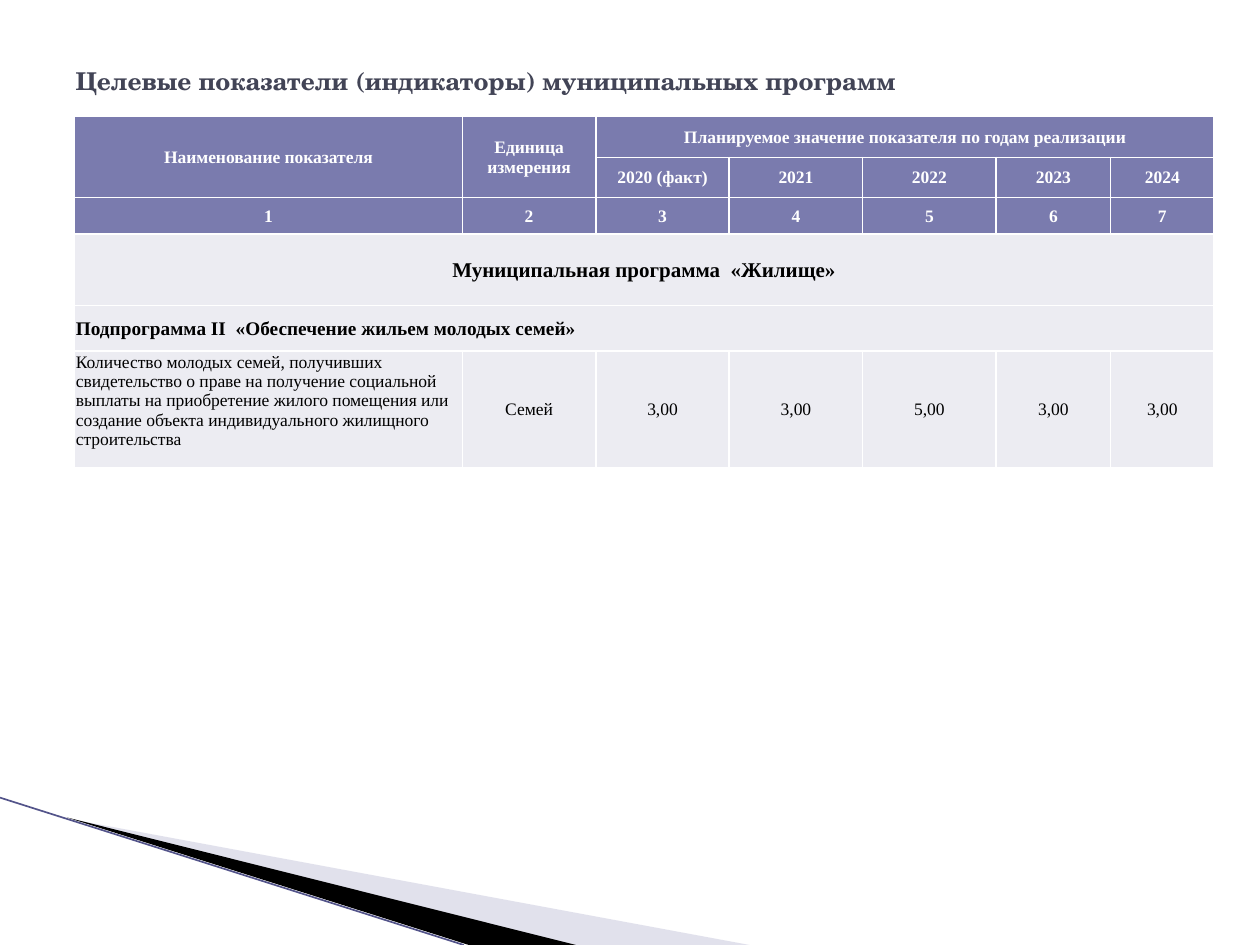
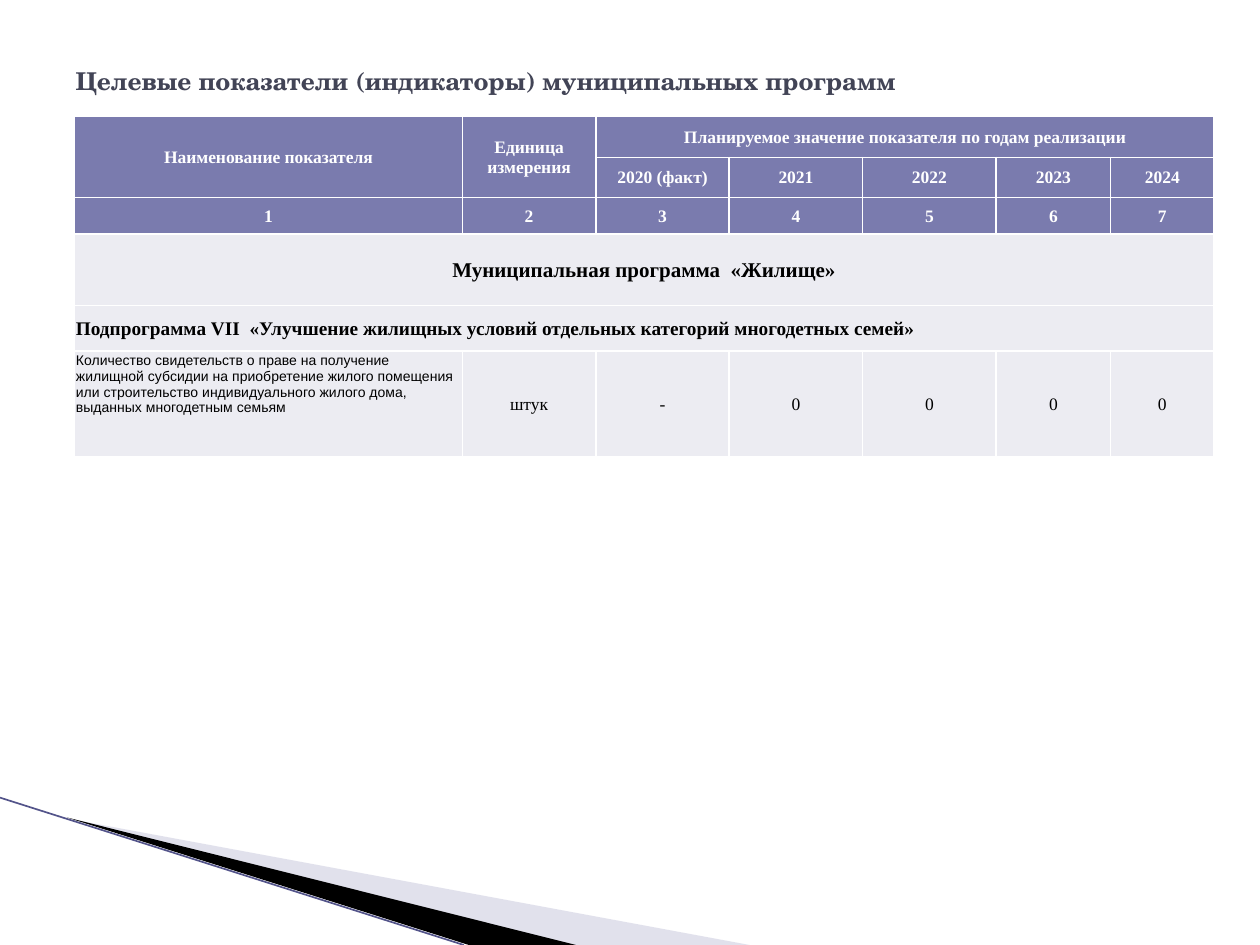
from dataclasses import dataclass

from lxml.etree import SubElement
from pptx import Presentation
from pptx.dml.color import RGBColor
from pptx.enum.shapes import MSO_CONNECTOR
from pptx.enum.text import MSO_ANCHOR, PP_ALIGN
from pptx.oxml.ns import qn
from pptx.util import Cm, Pt


@dataclass(frozen=True)
class Theme:
    title_color: str = "424456"
    header_fill: str = "7A7BAE"
    header_text: str = "FFFFFF"
    body_fill: str = "ECECF2"
    body_text: str = "000000"
    border: str = "FFFFFF"
    wedge_light: str = "B6B6D1"
    wedge_dark: str = "000000"
    edge_line: str = "53548A"
    title_font: str = "TeX Gyre Schola"
    table_font: str = "Times New Roman"
    note_font: str = "Arial"
    title_size: int = 14
    program_size: int = 12
    subprogram_size: int = 11
    table_size: int = 10
    note_size: int = 8


THEME = Theme()
TITLE = "Целевые показатели (индикаторы) муниципальных программ"
PROGRAM = "Муниципальная программа  «Жилище»"
YEARS = ["2020 (факт)", "2021", "2022", "2023", "2024"]
COL_WIDTHS = [7.82, 2.69, 2.69, 2.69, 2.69, 2.31, 2.08]
ROW_HEIGHTS = [0.83, 0.81, 0.74, 1.44, 0.92]
MERGES = [((0, 0), (1, 0)), ((0, 1), (1, 1)), ((0, 2), (0, 6)),
          ((3, 0), (3, 6)), ((4, 0), (4, 6))]
HEADER_ROWS = 3

INDICATORS = [
    dict(
        subprogram="Подпрограмма II  «Обеспечение жильем молодых семей»",
        name="Количество молодых семей, получивших свидетельство о праве на "
             "получение социальной выплаты на приобретение жилого помещения или "
             "создание объекта индивидуального жилищного строительства",
        values=["Семей", "3,00", "3,00", "5,00", "3,00", "3,00"],
        height=2.34,
    ),
    dict(
        subprogram="Подпрограмма VII  «Улучшение жилищных условий отдельных "
                   "категорий многодетных семей»",
        name="Количество свидетельств о праве на получение жилищной субсидии на "
             "приобретение жилого помещения или строительство индивидуального "
             "жилого дома, выданных многодетным семьям",
        values=["штук", "-", "0", "0", "0", "0"],
        height=2.12,
        name_format=dict(font=THEME.note_font, size=THEME.note_size),
    ),
]


def rgb(color):
    return RGBColor.from_string(color)


def write(tf, text, *, size=THEME.table_size, font=THEME.table_font,
          color=THEME.body_text, bold=False, align=PP_ALIGN.CENTER):
    p = tf.paragraphs[0]
    p.alignment = align
    r = p.add_run()
    r.text = text
    r.font.size, r.font.name, r.font.bold = Pt(size), font, bold
    r.font.color.rgb = rgb(color)


def add_wedge(slide, points, color, alpha=None):
    """Draw a filled triangle; points are in centimetres, alpha in percent."""
    start, *rest = [(Cm(x), Cm(y)) for x, y in points]
    builder = slide.shapes.build_freeform(*start)
    builder.add_line_segments(rest, close=True)
    sp = builder.convert_to_shape()
    sp.shadow.inherit = False
    sp.fill.solid()
    sp.fill.fore_color.rgb = rgb(color)
    sp.line.fill.background()
    if alpha is not None:
        clr = sp.element.spPr.find(f"{qn('a:solidFill')}/{qn('a:srgbClr')}")
        SubElement(clr, qn("a:alpha")).set("val", str(alpha * 1000))
    return sp


def add_edge_line(slide, start, end):
    line = slide.shapes.add_connector(
        MSO_CONNECTOR.STRAIGHT, *map(Cm, start + end))
    line.line.color.rgb = rgb(THEME.edge_line)
    line.line.width = Pt(0.95)
    SubElement(line.element.spPr, qn("a:effectLst"))
    return line


def decorate_layout(layout, slide):
    """Build the corner wedges on the slide, then move them to its layout."""
    corner = [
        add_wedge(slide, [(1.4, 16.51), (15.11, 19.05), (11.58, 19.05)],
                  THEME.wedge_light, alpha=40),
        add_wedge(slide, [(1.35, 16.48), (11.61, 19.05), (9.45, 19.05)],
                  THEME.wedge_dark),
        add_edge_line(slide, (0, 16.08), (9.35, 19.05)),
    ]
    for sp in corner:
        layout.shapes.element.append(sp.element)


def add_title(slide):
    title = slide.shapes.title
    title.left, title.top, title.width, title.height = map(
        Cm, (1.27, 0.76, 22.86, 1.75))
    title.text_frame.vertical_anchor = MSO_ANCHOR.MIDDLE
    write(title.text_frame, TITLE, size=THEME.title_size, font=THEME.title_font,
          color=THEME.title_color, bold=True, align=PP_ALIGN.LEFT)


def style_cell(cell, fill):
    cell.margin_left = cell.margin_right = cell.margin_top = Cm(0.03)
    cell.margin_bottom = 0
    cell.vertical_anchor = MSO_ANCHOR.MIDDLE
    tcPr = cell._tc.get_or_add_tcPr()
    for side in ("lnL", "lnR", "lnT", "lnB"):
        ln = SubElement(tcPr, qn(f"a:{side}"), w=str(Pt(1)))
        SubElement(SubElement(ln, qn("a:solidFill")), qn("a:srgbClr"),
                   val=THEME.border)
    cell.fill.solid()
    cell.fill.fore_color.rgb = rgb(fill)


def add_grid(slide, heights):
    """Add the empty table with its sizes, fills, borders and merged cells."""
    frame = slide.shapes.add_table(
        len(heights), len(COL_WIDTHS), Cm(1.5), Cm(2.34),
        Cm(sum(COL_WIDTHS)), Cm(sum(heights)))
    table = frame.table
    table.first_row = table.horz_banding = False
    for col, width in zip(table.columns, COL_WIDTHS):
        col.width = Cm(width)
    for i, (row, height) in enumerate(zip(table.rows, heights)):
        row.height = Cm(height)
        for cell in row.cells:
            style_cell(cell, THEME.header_fill if i < HEADER_ROWS
                       else THEME.body_fill)
    for first, last in MERGES:
        table.cell(*first).merge(table.cell(*last))
    return table


def fill_row(table, row, texts, first_col=0, **fmt):
    for col, text in enumerate(texts, first_col):
        write(table.cell(row, col).text_frame, text, **fmt)


def add_indicator_table(slide, subprogram, name, values, height, name_format=None):
    table = add_grid(slide, ROW_HEIGHTS + [height])
    header = dict(color=THEME.header_text, bold=True)
    fill_row(table, 0, ["Наименование показателя", "Единица измерения",
                        "Планируемое значение показателя по годам реализации"],
             **header)
    fill_row(table, 1, YEARS, first_col=2, **header)
    fill_row(table, 2, [str(n + 1) for n in range(len(COL_WIDTHS))], **header)
    fill_row(table, 3, [PROGRAM], size=THEME.program_size, bold=True)
    fill_row(table, 4, [subprogram], size=THEME.subprogram_size, bold=True,
             align=PP_ALIGN.LEFT)
    fill_row(table, 5, [name], align=PP_ALIGN.LEFT, **(name_format or {}))
    table.cell(5, 0).vertical_anchor = MSO_ANCHOR.TOP
    fill_row(table, 5, values, first_col=1)


def main():
    prs = Presentation()
    prs.slide_width, prs.slide_height = Cm(25.4), Cm(19.05)
    layout = prs.slide_layouts.get_by_name("Title Only")
    for number, indicator in enumerate(INDICATORS):
        slide = prs.slides.add_slide(layout)
        if number == 0:
            decorate_layout(layout, slide)
        add_title(slide)
        add_indicator_table(slide, **indicator)
    prs.save("out.pptx")


if __name__ == "__main__":
    main()
